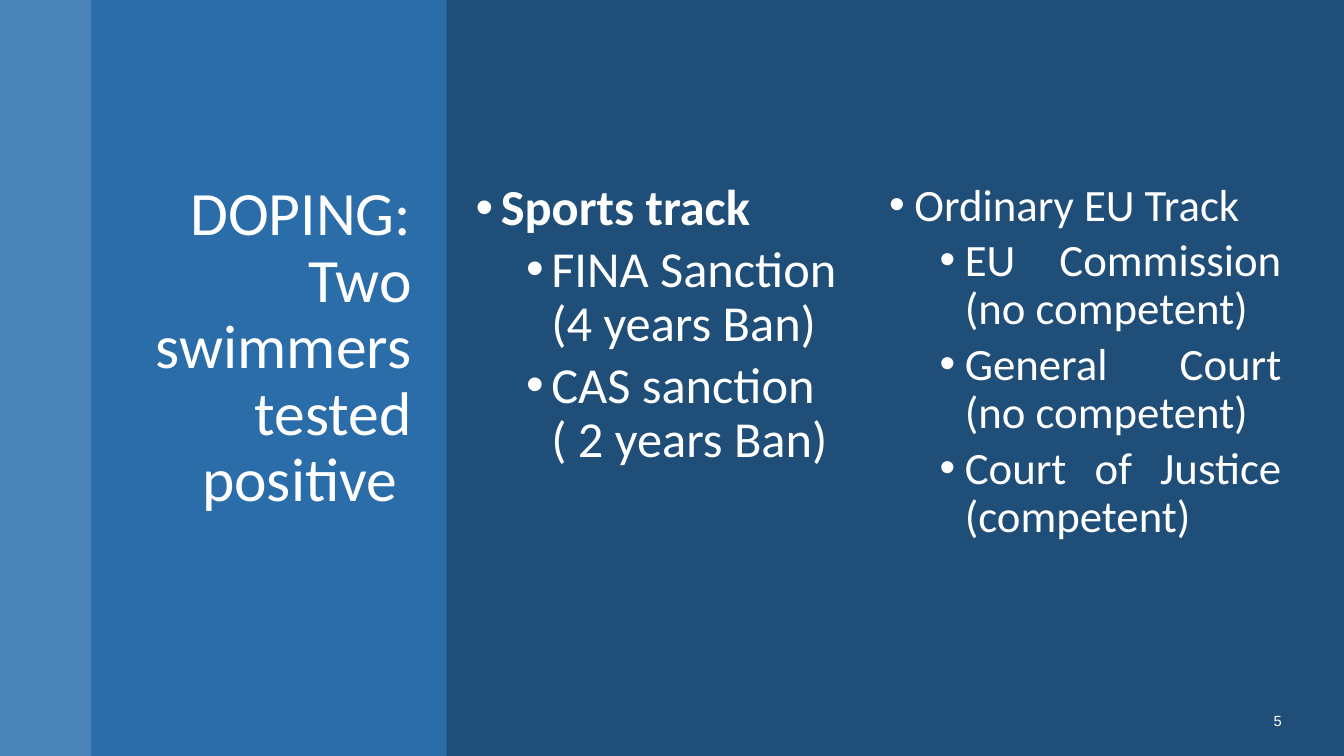
"""Build the slide on the two legal tracks of a swimmers' doping case."""
from lxml.etree import SubElement
from pptx import Presentation
from pptx.dml.color import RGBColor
from pptx.enum.shapes import MSO_SHAPE
from pptx.enum.text import MSO_ANCHOR, PP_ALIGN
from pptx.oxml.ns import qn
from pptx.util import Inches, Pt

WIDTH, HEIGHT = 13.33, 7.5
TOP, TEXT_HEIGHT = 1.76, 4.92
BACKGROUND, WHITE = "1F4E79", "FFFFFF"
BANDS = [
    {"left": 0, "width": 0.91, "color": "5B9BD5", "opacity": 70},
    {"left": 0.91, "width": 3.52, "color": "2E75B6", "opacity": 80},
]
TITLE = "DOPING:\nTwo swimmers tested positive "
TRACKS = [
    {
        "heading": "Sports track",
        "steps": ["FINA Sanction (4 years Ban)", "CAS sanction ( 2 years Ban)"],
        "left": 4.62, "width": 4.1, "size": 36, "bold": True, "align": PP_ALIGN.LEFT,
    },
    {
        "heading": "Ordinary EU Track",
        "steps": [
            "EU Commission (no competent)",
            "General Court (no competent)",
            "Court of Justice (competent)",
        ],
        "left": 8.72, "width": 4.09, "size": 32, "bold": False, "align": PP_ALIGN.JUSTIFY,
    },
]
PAGE_NUMBER = "5"


def paint(fill, color):
    fill.solid()
    fill.fore_color.rgb = RGBColor.from_string(color)


def add_band(slide, left, width, color, opacity):
    band = slide.shapes.add_shape(
        MSO_SHAPE.RECTANGLE, Inches(left), 0, Inches(width), Inches(HEIGHT))
    band.shadow.inherit = False
    band.line.fill.background()
    paint(band.fill, color)
    tint = band.fill._xPr.find(qn("a:solidFill"))[0]
    SubElement(tint, qn("a:alpha"), val=str(opacity * 1000))


def add_frame(slide, left, top, width, height):
    box = slide.shapes.add_textbox(Inches(left), Inches(top), Inches(width), Inches(height))
    box.text_frame.word_wrap = True
    return box.text_frame


def write(paragraph, text, size, align, font="Calibri", bold=False):
    paragraph.text = text
    paragraph.alignment = align
    for run in paragraph.runs:
        run.font.name = font
        run.font.size = Pt(size)
        run.font.bold = bold
        run.font.color.rgb = RGBColor.from_string(WHITE)


def add_bullet(paragraph, level):
    paragraph.level = level
    paragraph.line_spacing = 0.9
    paragraph.space_before = Pt(5 if level else 10)
    properties = paragraph._p.get_or_add_pPr()
    properties.set("marL", str(Inches(0.25 + 0.5 * level)))
    properties.set("indent", str(Inches(-0.25)))
    SubElement(properties, qn("a:buFont"), typeface="Arial")
    SubElement(properties, qn("a:buChar"), char="•")


def add_track(slide, track):
    frame = add_frame(slide, track["left"], TOP, track["width"], TEXT_HEIGHT)
    for index, text in enumerate([track["heading"], *track["steps"]]):
        paragraph = frame.add_paragraph() if index else frame.paragraphs[0]
        write(paragraph, text, track["size"], track["align"],
              bold=track["bold"] and index == 0)
        add_bullet(paragraph, level=min(index, 1))


def main():
    deck = Presentation()
    deck.slide_width, deck.slide_height = Inches(WIDTH), Inches(HEIGHT)
    slide = deck.slides.add_slide(deck.slide_layouts[6])
    paint(slide.background.fill, BACKGROUND)
    for band in BANDS:
        add_band(slide, **band)

    title = add_frame(slide, 1.09, TOP, 3.09, TEXT_HEIGHT).paragraphs[0]
    write(title, TITLE, 44, PP_ALIGN.RIGHT)
    title.line_spacing = 0.9

    for track in TRACKS:
        add_track(slide, track)

    footer = add_frame(slide, 11.32, 6.95, 1.49, 0.4)
    footer.vertical_anchor = MSO_ANCHOR.MIDDLE
    write(footer.paragraphs[0], PAGE_NUMBER, 10.5, PP_ALIGN.RIGHT, font="Arial")
    footer.paragraphs[0].space_after = Pt(6)
    deck.save("out.pptx")


if __name__ == "__main__":
    main()
